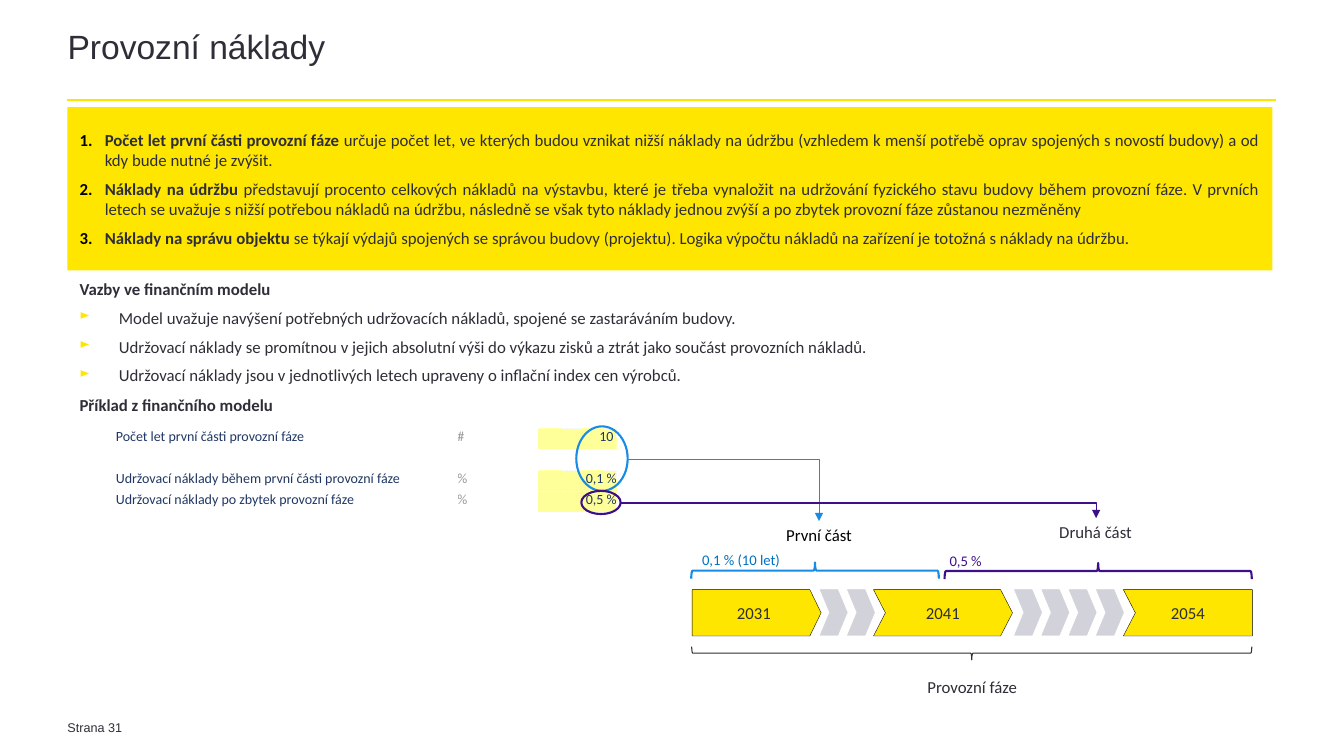
from lxml import etree
from pptx import Presentation
from pptx.dml.color import RGBColor
from pptx.enum.shapes import MSO_CONNECTOR, MSO_SHAPE
from pptx.enum.text import MSO_ANCHOR, PP_ALIGN
from pptx.oxml.ns import qn
from pptx.util import Pt

LEFT, CENTER, RIGHT, JUSTIFY = PP_ALIGN.LEFT, PP_ALIGN.CENTER, PP_ALIGN.RIGHT, PP_ALIGN.JUSTIFY
TOP, MIDDLE = MSO_ANCHOR.TOP, MSO_ANCHOR.MIDDLE
YELLOW, DARK, BLUE, PURPLE = "FFE600", "2E2E38", "188CE5", "3D108A"
BLACK, WHITE, GRAY, NAVY = "000000", "FFFFFF", "D2D2DA", "203764"
LABEL_INSETS = (0, 2.9, 0, 0)
BODY_INSETS = (8.64,) * 4

TITLE = "Provozní náklady"
FOOTER = "Strana 31"
DEFINITIONS = [
    ("number", [("Počet let první části provozní fáze ", True),
                ("určuje počet let, ve kterých budou vznikat nižší náklady na údržbu (vzhledem k menší potřebě "
                 "oprav spojených s novostí budovy) a od kdy bude nutné je zvýšit.", False)]),
    ("number", [("Náklady na údržbu ", True),
                ("představují procento celkových nákladů na výstavbu, které je třeba vynaložit na udržování "
                 "fyzického stavu budovy během provozní fáze. V prvních letech se uvažuje s nižší potřebou "
                 "nákladů na údržbu, následně se však tyto náklady jednou zvýší a po zbytek provozní fáze "
                 "zůstanou nezměněny", False)]),
    ("number", [("Náklady na správu objektu", True),
                (" se týkají výdajů spojených se správou budovy (projektu). Logika výpočtu nákladů na "
                 "zařízení je totožná s náklady na údržbu.", False)]),
]
MODEL_LINKS = [
    (None, [("Vazby ve finančním modelu", True)]),
    ("arrow", [("Model uvažuje navýšení potřebných udržovacích nákladů, spojené se zastaráváním budovy.", False)]),
    ("arrow", [("Udržovací náklady se promítnou v jejich absolutní výši do výkazu zisků a ztrát jako "
                "součást provozních nákladů.", False)]),
    ("arrow", [("Udržovací náklady jsou v jednotlivých letech upraveny o inflační index cen výrobců.", False)]),
]
EXAMPLE = [(None, [("Příklad z finančního modelu", True)])]
COST_ROWS = [
    ("Počet let první části provozní fáze", "#", "10 "),
    ("", "", ""),
    ("Udržovací náklady během první části provozní fáze", "%", "0,1 %"),
    ("Udržovací náklady po zbytek provozní fáze", "%", "0,5 %"),
]
COST_COLUMNS = [(244.08, LEFT, NAVY), (56.88, LEFT, "999999"), (56.88, RIGHT, NAVY)]
LABELS = [
    ("První část", (525.6, 372.24, 119.52, 17.28), 12, BLACK),
    ("Druhá část", (742.32, 370.08, 81.36, 17.28), 12, DARK),
    ("0,1 % (10 let)", (491.76, 390.24, 75.6, 16.56), 10.5, "0070C0"),
    ("0,5 %", (673.2, 390.96, 33.84, 15.84), 10.5, PURPLE),
    ("Provozní fáze", (634.32, 480.24, 120.96, 17.28), 12, DARK),
]
BRACES = [
    (494, 671, 401.8, 11.5, 270, BLUE, 1.5),
    (675, 894.6, 402.1, 11.5, 270, PURPLE, 1.5),
    (494.3, 894.6, 461.9, 9.4, 90, DARK, 0.75),
]
RINGS = [((411.84, 304.56, 36.72, 46.08), BLUE), ((415.44, 350.64, 28.08, 16.56), PURPLE)]
ARROWS = [((448.56, 328.32), (585.36, 372.24), BLUE), ((443.52, 359.28), (783.36, 370.08), PURPLE)]
BAND_TOP, BAND_HEIGHT = 421.2, 33.1
YEAR_SHAPES = [
    ("2031", MSO_SHAPE.PENTAGON, 494.64, 92.16, 0.243),
    ("2041", MSO_SHAPE.CHEVRON, 624.24, 99.36, 0.257),
]
LAST_YEAR = "2054"
GAP_CHEVRONS = [(586.1, 2), (725, 4)]
GAP_STEP = 19.5
BULLETS = {
    "number": (18, BLACK, 100, "buAutoNum", {"type": "arabicPeriod"}),
    "arrow": (28.1, YELLOW, 80, "buChar", {"char": "►"}),
}


def rgb(value):
    return RGBColor.from_string(value)


def points(values):
    return [Pt(value) for value in values]


def child(parent, tag, **attributes):
    return etree.SubElement(parent, qn("a:" + tag), attributes)


def add_bullet(para, kind):
    indent, color, percent, tag, attributes = BULLETS[kind]
    properties = para._p.get_or_add_pPr()
    properties.set("marL", str(Pt(indent)))
    properties.set("indent", str(-Pt(indent)))
    child(child(properties, "buClr"), "srgbClr", val=color)
    child(properties, "buSzPct", val=str(percent * 1000))
    child(properties, tag, **attributes)


def write(frame, text, size=12, color=DARK, font="Calibri", align=LEFT, after=0, line=None,
          insets=None, anchor=TOP):
    paragraphs = [(None, [(text, False)])] if isinstance(text, str) else text
    frame.word_wrap = True
    frame.vertical_anchor = anchor
    if insets:
        frame.margin_left, frame.margin_top, frame.margin_right, frame.margin_bottom = points(insets)
    for index, (bullet, spans) in enumerate(paragraphs):
        para = frame.add_paragraph() if index else frame.paragraphs[0]
        if bullet:
            add_bullet(para, bullet)
        para.alignment = LEFT if bullet == "arrow" else align
        para.space_after = Pt(after)
        if line:
            para.line_spacing = line
        for words, bold in spans:
            span = para.add_run()
            span.text = words
            span.font.size, span.font.name, span.font.bold = Pt(size), font, bold
            span.font.color.rgb = rgb(color)


def paint(shape, fill=None, line=None, width=0.25):
    shape.shadow.inherit = False
    if fill:
        shape.fill.solid()
        shape.fill.fore_color.rgb = rgb(fill)
    else:
        shape.fill.background()
    if line:
        shape.line.color.rgb = rgb(line)
        shape.line.width = Pt(width)
    else:
        shape.line.fill.background()


def add_box(page, place, text, **style):
    write(page.shapes.add_textbox(*points(place)).text_frame, text, **style)


def add_preset(page, kind, place, **style):
    shape = page.shapes.add_shape(kind, *points(place))
    paint(shape, **style)
    return shape


def add_line(page, kind, start, end, color, width):
    connector = page.shapes.add_connector(kind, *points(start + end))
    connector.line.color.rgb = rgb(color)
    connector.line.width = Pt(width)
    child(connector._element.spPr, "effectLst")
    return connector


def add_arrow(page, start, end, color):
    arrow = add_line(page, MSO_CONNECTOR.ELBOW, start, end, color, 0.75)
    arrow._element.spPr.find(qn("a:prstGeom")).set("prst", "bentConnector2")
    child(arrow.line._get_or_add_ln(), "tailEnd", type="triangle")


def add_brace(page, left, right, top, depth, rotation, color, width):
    span = right - left
    place = ((left + right - depth) / 2, top + (depth - span) / 2, depth, span)
    add_preset(page, MSO_SHAPE.RIGHT_BRACE, place, line=color, width=width).rotation = rotation


def add_cost_table(page):
    width = sum(column[0] for column in COST_COLUMNS)
    table = page.shapes.add_table(len(COST_ROWS), len(COST_COLUMNS),
                                  *points((82.8, 306, width, 60))).table
    table.first_row = table.horz_banding = False
    for row, texts in enumerate(COST_ROWS):
        table.rows[row].height = Pt(15)
        for column, (column_width, align, color) in enumerate(COST_COLUMNS):
            table.columns[column].width = Pt(column_width)
            cell = table.cell(row, column)
            cell.margin_left = cell.margin_top = cell.margin_right = cell.margin_bottom = 0
            para = cell.text_frame.paragraphs[0]
            if texts[column]:
                write(cell.text_frame, texts[column], size=10, color=color, align=align)
            else:
                child(para._p, "endParaRPr", sz="1000")
            if align == RIGHT:
                for side in ("lnL", "lnR", "lnT", "lnB"):
                    border = child(cell._tc.get_or_add_tcPr(), side, w=str(Pt(0.5)))
                    child(child(border, "solidFill"), "srgbClr", val=WHITE)
                    child(border, "prstDash", val="dot")
            if align == RIGHT and texts[column]:
                cell.fill.solid()
                cell.fill.fore_color.rgb = rgb("FFFF99")
            else:
                cell.fill.background()


def add_timeline(page):
    for year, kind, left, width, notch in YEAR_SHAPES:
        shape = add_preset(page, kind, (left, BAND_TOP, width, BAND_HEIGHT), fill=YELLOW, line=BLACK)
        shape.adjustments[0] = notch
        write(shape.text_frame, year, align=CENTER, anchor=MIDDLE)
    left, right, bottom = 802.8, 895, BAND_TOP + BAND_HEIGHT
    builder = page.shapes.build_freeform(Pt(left), Pt(BAND_TOP))
    corners = [(right, BAND_TOP), (right, bottom), (left, bottom), (left + 8.6, BAND_TOP + BAND_HEIGHT / 2)]
    builder.add_line_segments([points(corner) for corner in corners], close=True)
    last = builder.convert_to_shape()
    paint(last, fill=YELLOW, line=BLACK)
    write(last.text_frame, LAST_YEAR, align=CENTER, anchor=MIDDLE)
    for start, count in GAP_CHEVRONS:
        for index in range(count):
            place = (start + index * GAP_STEP, BAND_TOP, GAP_STEP, BAND_HEIGHT - 0.5)
            add_preset(page, MSO_SHAPE.CHEVRON, place, fill=GRAY, line=GRAY).adjustments[0] = 0.35


def main():
    deck = Presentation()
    deck.slide_width, deck.slide_height = Pt(960.48), Pt(540)
    page = deck.slides.add_slide(deck.slide_layouts[5])
    title = page.shapes.title
    title.left, title.top, title.width, title.height = points((48.24, 23.04, 864.72, 46.8))
    write(title.text_frame, TITLE, size=24, font="Arial", line=0.85, insets=(0,) * 4)
    add_box(page, (48.24, 512.64, 72, 12.24), FOOTER, size=9, font="Arial", line=0.85, insets=LABEL_INSETS)
    add_line(page, MSO_CONNECTOR.STRAIGHT, (48.24, 71.5), (912.24, 71.5), YELLOW, 1.5)
    add_cost_table(page)
    banner = add_preset(page, MSO_SHAPE.RECTANGLE, (48.24, 76.5, 861.12, 116.64), fill=YELLOW)
    body = {"align": JUSTIFY, "after": 6, "insets": BODY_INSETS}
    write(banner.text_frame, DEFINITIONS, anchor=MIDDLE, **body)
    add_box(page, (48.24, 190.8, 861.12, 93.6), MODEL_LINKS, **body)
    add_box(page, (48.24, 275.04, 861.12, 31.68), EXAMPLE, **body)
    for text, place, size, color in LABELS:
        add_box(page, place, text, size=size, color=color, align=CENTER, insets=LABEL_INSETS)
    for brace in BRACES:
        add_brace(page, *brace)
    for place, color in RINGS:
        add_preset(page, MSO_SHAPE.OVAL, place, line=color, width=1.5)
    for arrow in ARROWS:
        add_arrow(page, *arrow)
    add_timeline(page)
    deck.save("out.pptx")


if __name__ == "__main__":
    main()
